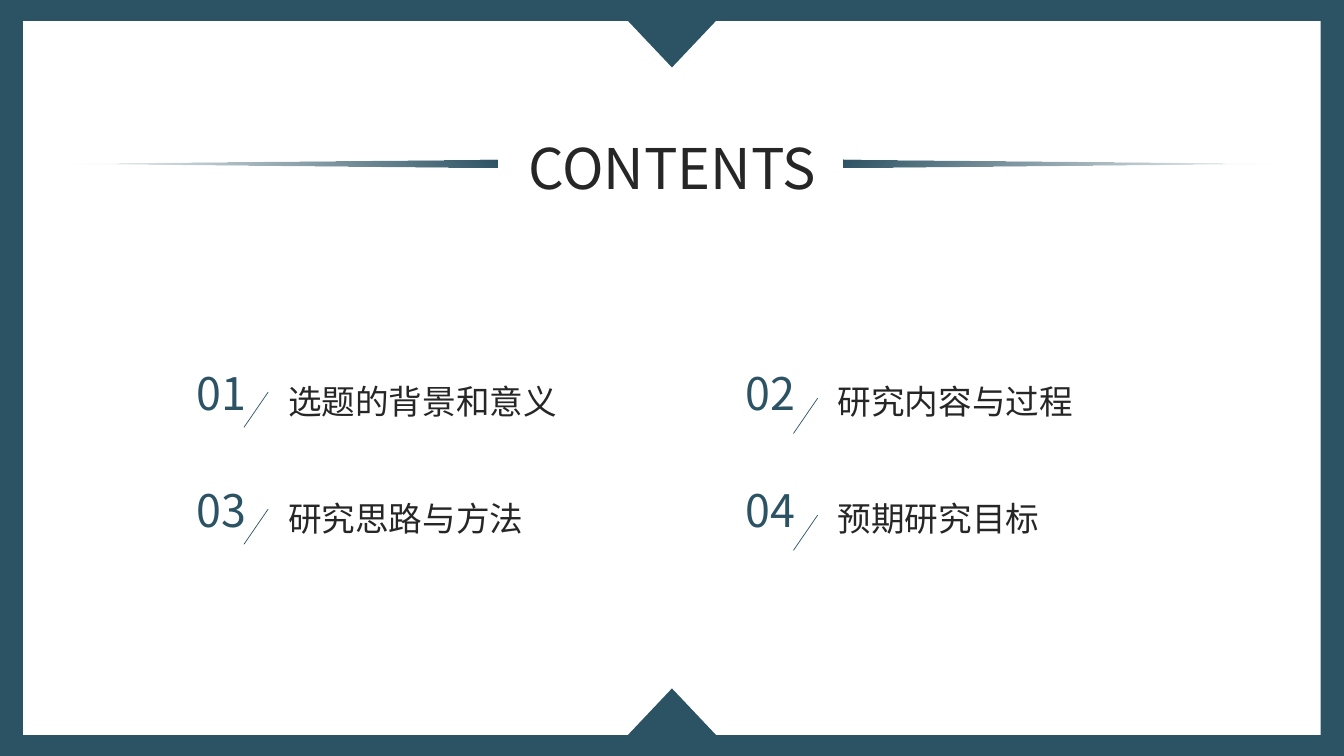
from lxml import etree
from pptx import Presentation
from pptx.dml.color import RGBColor
from pptx.enum.shapes import MSO_CONNECTOR, MSO_SHAPE
from pptx.enum.text import MSO_ANCHOR, MSO_AUTO_SIZE, PP_ALIGN
from pptx.oxml.ns import qn
from pptx.util import Inches, Pt

RECT, TRIANGLE = MSO_SHAPE.RECTANGLE, MSO_SHAPE.ISOSCELES_TRIANGLE
STRAIGHT = MSO_CONNECTOR.STRAIGHT
TOP, GROW = MSO_ANCHOR.TOP, MSO_AUTO_SIZE.SHAPE_TO_FIT_TEXT
LEFT, CENTER, JUSTIFY = PP_ALIGN.LEFT, PP_ALIGN.CENTER, PP_ALIGN.JUSTIFY

FONT = "Noto Sans CJK SC"
COLORS = {"teal": "2C5364", "white": "FFFFFF", "ink": "262626"}
TOPICS = ["选题的背景和意义", "研究内容与过程", "研究思路与方法", "预期研究目标"]


class Deck:
    """Holds the presentation, its style and the current slide."""

    def __init__(self):
        self.prs = Presentation()
        self.prs.slide_width, self.prs.slide_height = Inches(13.33), Inches(7.5)
        self.s = self.prs.slides.add_slide(self.prs.slide_layouts[5])
        self.paint(self.s.background.fill, "teal")

    def color(self, name):
        return RGBColor.from_string(COLORS[name])

    def paint(self, fill, name):
        fill.solid()
        fill.fore_color.rgb = self.color(name)

    def shape(self, kind, box, fill, rotation=0, flip=None):
        sp = self.s.shapes.add_shape(kind, *map(Inches, box))
        sp.shadow.inherit = False
        sp.line.fill.background()
        self.paint(sp.fill, fill)
        sp.rotation = rotation
        if flip:
            sp._element.spPr.find(qn("a:xfrm")).set(flip, "1")
        return sp

    def fading_blade(self, box, rotation, flip=None):
        sp = self.shape(TRIANGLE, box, "teal", rotation, flip)
        sp.fill.gradient()
        sp.fill.gradient_angle = 45
        for stop in sp.fill.gradient_stops:
            stop.color.rgb = self.color("teal")
        last = list(sp._element.spPr.iter(qn("a:srgbClr")))[-1]
        etree.SubElement(last, qn("a:alpha")).set("val", "0")

    def set_text(self, sp, text, size, color, align):
        tf = sp.text_frame
        tf.text = text
        tf.word_wrap = True
        tf.auto_size = GROW
        tf.vertical_anchor = TOP
        p = tf.paragraphs[0]
        p.alignment = align
        p.font.size = Pt(size)
        p.font.color.rgb = self.color(color)
        p.font.name = FONT
        props = p._p.pPr.find(qn("a:defRPr"))
        etree.SubElement(props, qn("a:ea")).set("typeface", FONT)

    def text(self, box, text, size, color, align=LEFT):
        sp = self.s.shapes.add_textbox(*map(Inches, box))
        self.set_text(sp, text, size, color, align)

    def title(self, box, text):
        sp = self.s.shapes.title
        sp.left, sp.top, sp.width, sp.height = map(Inches, box)
        self.set_text(sp, text, 40, "ink", CENTER)
        self.s.shapes._spTree.append(sp._element)

    def line(self, start, end):
        ln = self.s.shapes.add_connector(STRAIGHT, *map(Inches, start + end))
        ln.line.color.rgb = self.color("teal")
        ln.line.width = Pt(0.5)
        etree.SubElement(ln._element.spPr, qn("a:effectLst"))


def main():
    deck = Deck()
    deck.shape(RECT, (0.23, 0.21, 12.87, 7.08), "white")
    deck.shape(TRIANGLE, (6.23, 6.83, 0.87, 0.46), "teal")
    deck.shape(TRIANGLE, (6.23, 0.21, 0.87, 0.46), "teal", flip="flipV")

    for i, topic in enumerate(TOPICS):
        row, col = divmod(i, 2)
        x, y = 1.85 + 5.45 * col, 3.58 + 1.16 * row
        deck.text((x, y, 0.95, 0.64), f"{i + 1:02}", 32, "teal")
        deck.text((x + 0.91, y + 0.15, 3.27, 0.5), topic, 24, "ink", JUSTIFY)
        slash_y = y + 0.31 + 0.06 * col
        deck.line((x + 0.81, slash_y), (x + 0.57, slash_y + 0.35))

    deck.title((5.03, 1.27, 3.27, 0.77), "CONTENTS")
    deck.fading_blade((10.47, -0.52, 0.08, 4.28), 90)
    deck.fading_blade((2.75, -0.52, 0.08, 4.28), 270, "flipH")
    deck.prs.save("out.pptx")


if __name__ == "__main__":
    main()
